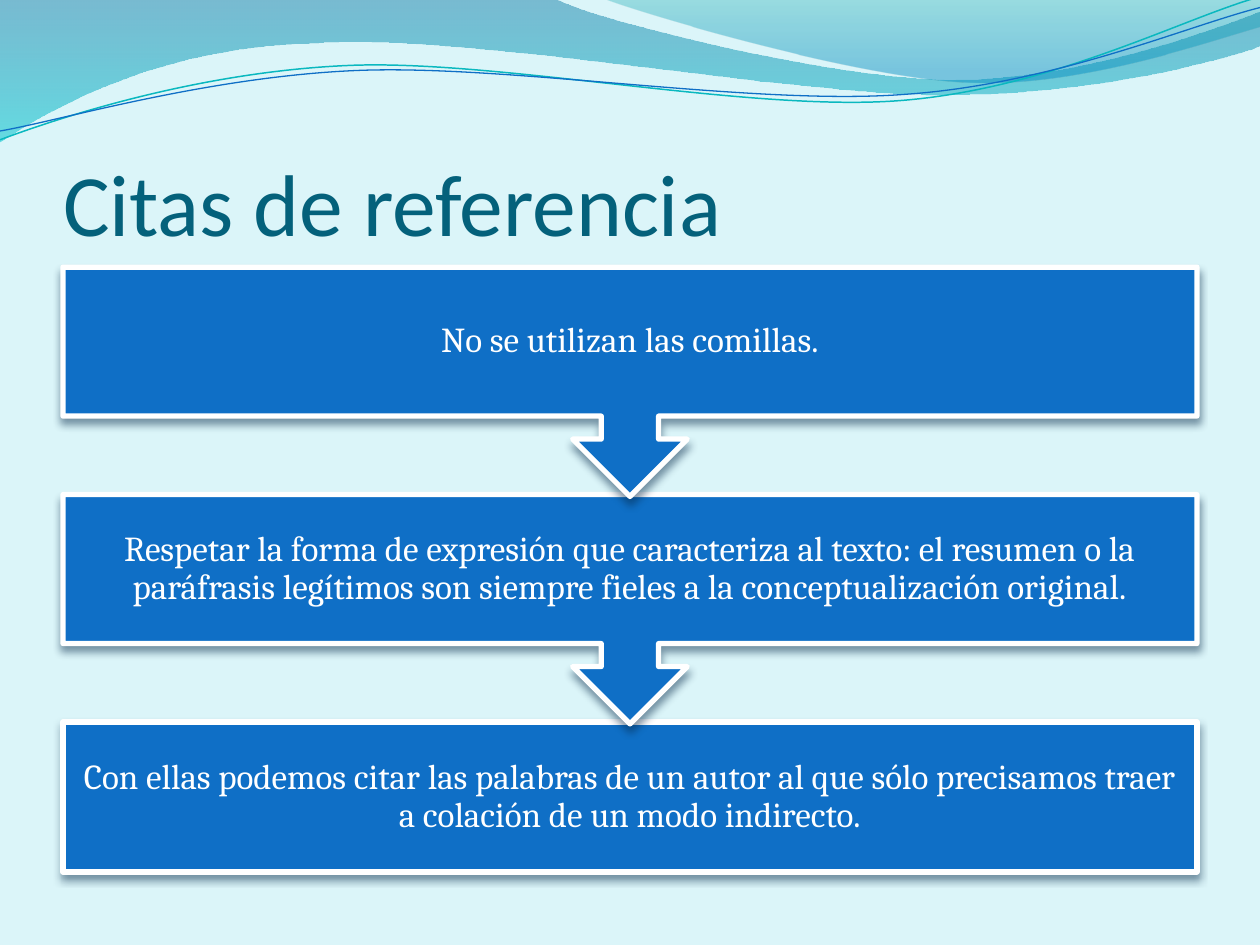
from dataclasses import dataclass

import pptx
import pptx.dml.color
import pptx.enum.shapes
import pptx.enum.text
import pptx.oxml
import pptx.oxml.ns
import pptx.util
from pptx.shapes.autoshape import Shape
from pptx.slide import Slide

EMU_PER_PX = 9144  # 100 px to the inch

Segment = tuple[int, ...]  # 2 numbers: line to; 6 numbers: cubic curve to


@dataclass(frozen=True)
class Theme:
    background: str = "DBF5F9"
    title: str = "04617B"
    step: str = "0F6FC6"
    on_step: str = "FFFFFF"
    shadow: str = "042747"
    title_font: str = "Calibri"
    step_font: str = "Cambria"
    title_size: int = 50
    step_size: int = 20
    step_border: int = 3


@dataclass(frozen=True)
class GradientStop:
    position: float
    color: str
    opacity: int


@dataclass(frozen=True)
class Band:
    segments: list[Segment]
    stops: tuple[GradientStop, GradientStop]


@dataclass(frozen=True)
class Strand:
    segments: list[Segment]
    color: str
    width: float


@dataclass(frozen=True)
class Step:
    text: str
    leads_on: bool = True


THEME = Theme()

BANDS = [
    Band([(-1, -1), (440, -1), (476, 17, 664, 63, 758, 63),
          (853, 63, 958, 26, 1000, 9), (1001, 36),
          (983, 44, 870, 76, 746, 75), (622, 75, 382, 28, 257, 34),
          (129, 36, 46, 83, -1, 113)],
         (GradientStop(0, "0074A1", 45), GradientStop(1, "00C6CF", 55))),
    Band([(479, -1), (509, 11, 682, 62, 769, 65),
          (856, 69, 961, 32, 1000, 21), (1000, 0)],
         (GradientStop(0, "00A1A9", 30), GradientStop(0.8, "008BBF", 45))),
]
STRANDS = [
    Strand([(0, 111), (48, 93, 158, 57, 277, 52), (395, 47, 593, 89, 713, 80),
            (833, 71, 938, 15, 998, -2)], "0AB8BF", 0.85),
    Strand([(0, 104), (47, 96, 164, 61, 283, 56), (403, 51, 597, 84, 717, 75),
            (836, 67, 941, 21, 1000, 6)], "0F6FC6", 0.75),
]
STEPS = [
    Step("No se utilizan las comillas."),
    Step("Respetar la forma de expresión que caracteriza al texto: el resumen o la "
         "paráfrasis legítimos son siempre fieles a la conceptualización original."),
    Step("Con ellas podemos citar las palabras de un autor al que sólo precisamos "
         "traer a colación de un modo indirecto.", leads_on=False),
]
STEP_LEFT, STEP_WIDTH, FIRST_TOP, LAST_TOP = 50, 900, 212, 573
BOX_HEIGHT, CALLOUT_HEIGHT, STEP_INSET = 119, 182, 16


def px(length: float) -> int:
    return round(length * EMU_PER_PX)


def rgb(color: str) -> pptx.dml.color.RGBColor:
    return pptx.dml.color.RGBColor.from_string(color)


def draw_outline(slide: Slide, segments: list[Segment], close: bool) -> Shape:
    """Lay the control points as lines, then join each curve's three into one cubic."""
    start, *rest = segments
    builder = slide.shapes.build_freeform(px(start[0]), px(start[1]))
    for segment in rest:
        points = zip(segment[::2], segment[1::2])
        builder.add_line_segments([(px(x), px(y)) for x, y in points], close=False)
    if close:
        builder.add_line_segments([], close=True)
    outline = builder.convert_to_shape()
    outline.shadow.inherit = False

    lines = iter(outline.element.xpath(".//a:path/a:lnTo"))
    for segment in rest:
        line = next(lines)
        if len(segment) == 6:
            curve = pptx.oxml.parse_xml(
                f'<a:cubicBezTo {pptx.oxml.ns.nsdecls("a")}/>')
            line.addprevious(curve)
            for control in (line, next(lines), next(lines)):
                curve.append(control[0])
                control.getparent().remove(control)
    return outline


def draw_band(slide: Slide, band: Band) -> None:
    wave = draw_outline(slide, band.segments, close=True)
    wave.line.fill.background()
    wave.fill.gradient()
    wave.fill.gradient_angle = 270
    for gradient_stop, stop in zip(wave.fill.gradient_stops, band.stops):
        gradient_stop.position = stop.position
        gradient_stop.color.rgb = rgb(stop.color)
    for color, stop in zip(wave.element.xpath(".//a:gs/a:srgbClr"), band.stops):
        color.append(pptx.oxml.parse_xml(
            f'<a:alpha {pptx.oxml.ns.nsdecls("a")} val="{stop.opacity * 1000}"/>'))


def draw_strand(slide: Slide, strand: Strand) -> None:
    wave = draw_outline(slide, strand.segments, close=False)
    wave.fill.background()
    wave.line.color.rgb = rgb(strand.color)
    wave.line.width = pptx.util.Pt(strand.width)


def style_text(frame: pptx.text.text.TextFrame, name: str, size: int, color: str) -> None:
    for paragraph in frame.paragraphs:
        for run in paragraph.runs:
            run.font.name = name
            run.font.size = pptx.util.Pt(size)
            run.font.color.rgb = rgb(color)


def place_title(slide: Slide, text: str) -> None:
    title = slide.shapes.title
    title.left, title.top, title.width, title.height = px(50), px(77), px(900), px(125)
    frame = title.text_frame
    frame.text = text
    frame.auto_size = pptx.enum.text.MSO_AUTO_SIZE.NONE
    frame.vertical_anchor = pptx.enum.text.MSO_ANCHOR.BOTTOM
    frame.margin_left = frame.margin_right = frame.margin_bottom = 0
    frame.margin_top = px(5)
    frame.paragraphs[0].alignment = pptx.enum.text.PP_ALIGN.LEFT
    style_text(frame, THEME.title_font, THEME.title_size, THEME.title)


def cast_shadow(shape: Shape) -> None:
    shape.shadow.inherit = False
    effects = shape.element.xpath("./p:spPr/a:effectLst")[0]
    effects.append(pptx.oxml.parse_xml(
        f'<a:outerShdw {pptx.oxml.ns.nsdecls("a")} blurRad="{pptx.util.Pt(4.5)}" '
        f'dist="{pptx.util.Pt(3)}" dir="5400000" rotWithShape="0">'
        f'<a:srgbClr val="{THEME.shadow}"><a:alpha val="48000"/></a:srgbClr>'
        '</a:outerShdw>'))


def draw_step(slide: Slide, step: Step, top: float) -> None:
    kinds = pptx.enum.shapes.MSO_SHAPE
    kind = kinds.DOWN_ARROW_CALLOUT if step.leads_on else kinds.RECTANGLE
    height = CALLOUT_HEIGHT if step.leads_on else BOX_HEIGHT
    box = slide.shapes.add_shape(kind, px(STEP_LEFT), px(top), px(STEP_WIDTH), px(height))
    box.fill.solid()
    box.fill.fore_color.rgb = rgb(THEME.step)
    box.line.color.rgb = rgb(THEME.on_step)
    box.line.width = pptx.util.Pt(THEME.step_border)
    cast_shadow(box)
    frame = box.text_frame
    frame.text = step.text
    frame.word_wrap = True
    frame.vertical_anchor = pptx.enum.text.MSO_ANCHOR.MIDDLE
    frame.margin_left = frame.margin_right = px(STEP_INSET)
    frame.margin_top = frame.margin_bottom = px(STEP_INSET)
    frame.paragraphs[0].alignment = pptx.enum.text.PP_ALIGN.CENTER
    frame.paragraphs[0].line_spacing = 0.9
    style_text(frame, THEME.step_font, THEME.step_size, THEME.on_step)


def main() -> None:
    deck = pptx.Presentation()
    deck.slide_width, deck.slide_height = px(1000), px(750)
    slide = deck.slides.add_slide(deck.slide_layouts[5])
    slide.background.fill.solid()
    slide.background.fill.fore_color.rgb = rgb(THEME.background)
    for band in BANDS:
        draw_band(slide, band)
    for strand in STRANDS:
        draw_strand(slide, strand)
    place_title(slide, "Citas de referencia")
    pitch = (LAST_TOP - FIRST_TOP) / (len(STEPS) - 1)
    # Later steps lie behind, so each arrow tip overlaps the next box.
    for index, step in reversed(list(enumerate(STEPS))):
        draw_step(slide, step, FIRST_TOP + index * pitch)
    deck.save("out.pptx")


if __name__ == "__main__":
    main()
